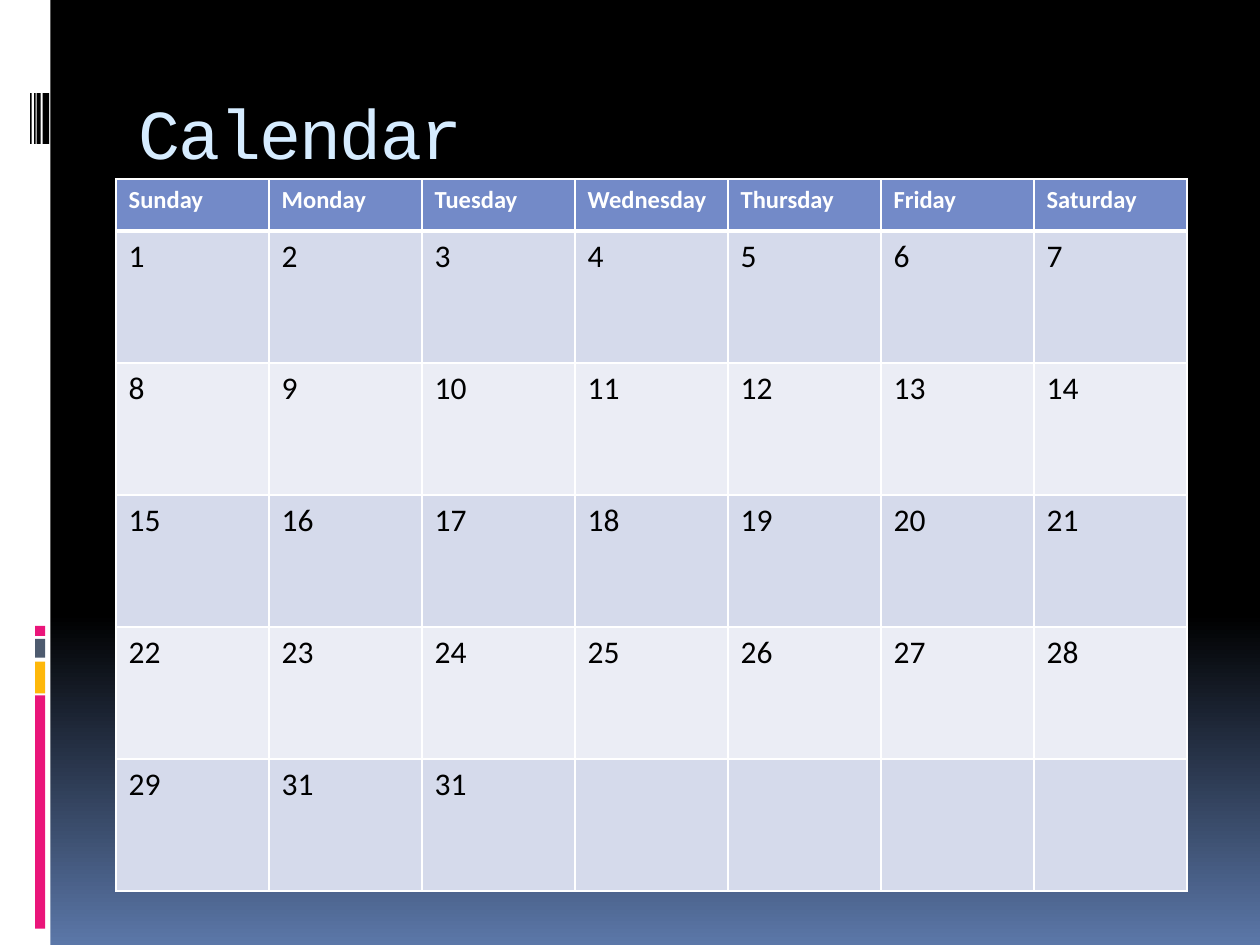
"""Build a one-slide monthly calendar with a striped side band."""
import copy
import dataclasses

import pptx
import pptx.dml.color
import pptx.enum.shapes
import pptx.enum.text
import pptx.oxml
import pptx.oxml.ns
import pptx.util

Cm = pptx.util.Cm
Pt = pptx.util.Pt
qn = pptx.oxml.ns.qn
RGB = pptx.dml.color.RGBColor.from_string


@dataclasses.dataclass(frozen=True)
class Theme:
    white: str = "FFFFFF"
    black: str = "000000"
    pink: str = "EA157A"
    slate: str = "4E5B6F"
    amber: str = "FEB80A"
    glow: str = "5B77A8"
    title: str = "D6ECFF"
    header: str = "738AC8"
    bands: tuple = ("D5DAEB", "EBEDF5")
    title_font: str = "Courier New"
    body_font: str = "Calibri"
    title_size: int = 40
    header_size: int = 14
    day_size: int = 18
    rule: int = 1
    header_rule: int = 3


THEME = Theme()
TITLE_FORMAT = {"name": THEME.title_font, "size": Pt(THEME.title_size), "bold": False}
HEADER_FORMAT = {"name": THEME.body_font, "size": Pt(THEME.header_size), "bold": True}
DAY_FORMAT = {"name": THEME.body_font, "size": Pt(THEME.day_size), "bold": False}

WEEKDAYS = ["Sunday", "Monday", "Tuesday", "Wednesday", "Thursday", "Friday", "Saturday"]
DAYS = [*range(1, 30), 31, 31]
WEEKS = 5

ACCENTS = [
    (12.62, 0.2, THEME.pink),
    (12.88, 0.38, THEME.slate),
    (13.34, 0.64, THEME.amber),
    (14.02, 4.7, THEME.pink),
]
BARCODE = [(0.61, 0.03), (0.69, 0.03), (0.74, 0.08), (0.86, 0.13)]


def set_background(s):
    fill = s.background.fill
    fill.gradient()
    fill.gradient_angle = 270
    stops = s.element.find(".//" + qn("a:gsLst"))
    stops.insert(0, copy.deepcopy(stops[0]))
    values = [(0, THEME.black), (0.65, THEME.black), (1, THEME.glow)]
    for stop, (position, color) in zip(fill.gradient_stops, values):
        stop.position = position
        stop.color.rgb = RGB(color)


def add_bar(s, left, top, width, height, color):
    sp = s.shapes.add_shape(
        pptx.enum.shapes.MSO_SHAPE.RECTANGLE, Cm(left), Cm(top), Cm(width), Cm(height)
    )
    sp.shadow.inherit = False
    sp.fill.solid()
    sp.fill.fore_color.rgb = RGB(color)
    sp.line.fill.background()


def add_side_band(s):
    add_bar(s, 0, 0, 1.02, 19.05, THEME.white)
    for top, height, color in ACCENTS:
        add_bar(s, 0.71, top, 0.2, height, color)
    for left, width in BARCODE:
        add_bar(s, left, 1.88, width, 1.02, THEME.black)


def write_text(tf, text, color, font_format):
    r = tf.paragraphs[0].add_run()
    r.text = text
    for name, value in font_format.items():
        setattr(r.font, name, value)
    r.font.color.rgb = RGB(color)


def set_title(s, text):
    sp = s.shapes.title
    box = {"left": Cm(2.54), "top": Cm(1.42), "width": Cm(21.59), "height": Cm(1.75)}
    for name, value in box.items():
        setattr(sp, name, value)
    tf = sp.text_frame
    frame = {
        "vertical_anchor": pptx.enum.text.MSO_ANCHOR.TOP,
        "auto_size": pptx.enum.text.MSO_AUTO_SIZE.NONE,
        "word_wrap": True,
        "margin_top": Cm(0.38),
    }
    for name, value in frame.items():
        setattr(tf, name, value)
    tf.paragraphs[0].alignment = pptx.enum.text.PP_ALIGN.LEFT
    write_text(tf, text, THEME.title, TITLE_FORMAT)
    for properties in sp.element.iter(qn("a:rPr")):
        properties.set("spc", "-100")


def set_borders(cell, top, bottom):
    widths = {"lnL": THEME.rule, "lnR": THEME.rule, "lnT": top, "lnB": bottom}
    properties = cell._tc.get_or_add_tcPr()
    for side, width in widths.items():
        properties.append(pptx.oxml.parse_xml(
            f'<a:{side} {pptx.oxml.ns.nsdecls("a")} w="{Pt(width)}"><a:solidFill>'
            f'<a:srgbClr val="{THEME.white}"/></a:solidFill></a:{side}>'
        ))


def fill_cell(cell, color):
    cell.fill.solid()
    cell.fill.fore_color.rgb = RGB(color)


def add_calendar(s):
    columns = len(WEEKDAYS)
    width, header_height, week_height = Cm(21.59), Cm(1.05), Cm(2.66)
    frame = s.shapes.add_table(
        WEEKS + 1, columns, Cm(2.34), Cm(3.61), width, header_height + WEEKS * week_height
    )
    table = frame.table
    for column in table.columns:
        column.width = width // columns
    for i, row in enumerate(table.rows):
        row.height = week_height if i else header_height
        top = THEME.header_rule if i == 1 else THEME.rule
        bottom = THEME.rule if i else THEME.header_rule
        for cell in row.cells:
            set_borders(cell, top, bottom)
            fill_cell(cell, THEME.bands[(i - 1) % 2] if i else THEME.header)
    for j, weekday in enumerate(WEEKDAYS):
        write_text(table.cell(0, j).text_frame, weekday, THEME.white, HEADER_FORMAT)
    for k, day in enumerate(DAYS):
        week, j = divmod(k, columns)
        write_text(table.cell(week + 1, j).text_frame, str(day), THEME.black, DAY_FORMAT)


def main():
    prs = pptx.Presentation()
    prs.slide_width, prs.slide_height = Cm(25.4), Cm(19.05)
    s = prs.slides.add_slide(prs.slide_layouts[5])
    set_background(s)
    add_side_band(s)
    set_title(s, "Calendar")
    add_calendar(s)
    prs.save("out.pptx")


if __name__ == "__main__":
    main()
